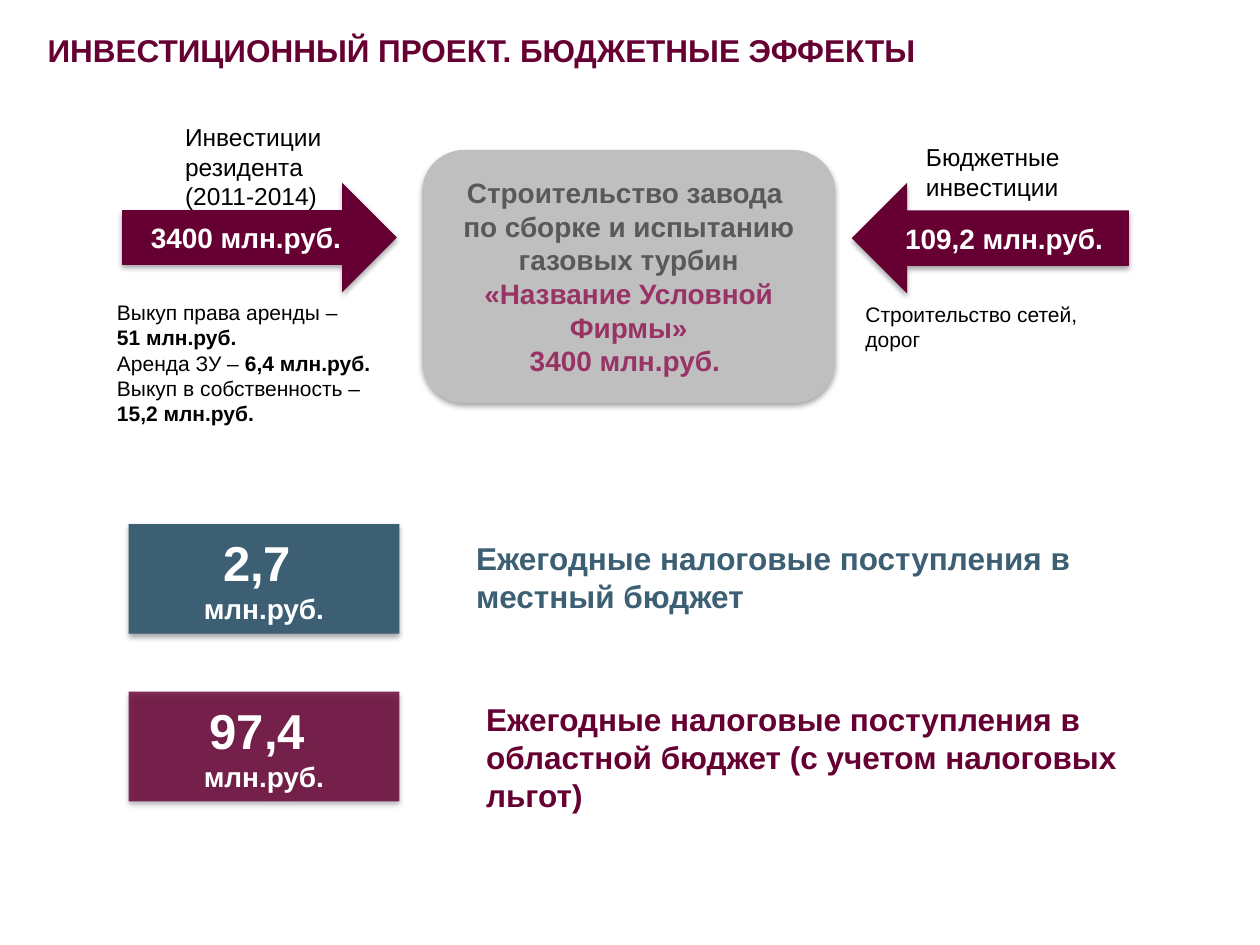
from lxml.etree import SubElement
from pptx import Presentation
from pptx.dml.color import RGBColor
from pptx.enum.shapes import MSO_SHAPE
from pptx.enum.text import MSO_ANCHOR, PP_ALIGN
from pptx.oxml.ns import qn
from pptx.util import Inches, Pt

WINE = RGBColor(0x66, 0x00, 0x33)
PLUM = RGBColor(0x99, 0x33, 0x66)
STEEL = RGBColor(0x3C, 0x5F, 0x74)
SILVER = RGBColor(0xBF, 0xBF, 0xBF)
GRAY = RGBColor(0x59, 0x59, 0x59)
WHITE = RGBColor(0xFF, 0xFF, 0xFF)
BLACK = RGBColor(0x00, 0x00, 0x00)


def add_text(sp, paragraphs, align=PP_ALIGN.LEFT, wrap=True):
    tf = sp.text_frame
    tf.word_wrap = wrap
    for i, runs in enumerate(paragraphs):
        p = tf.paragraphs[0] if i == 0 else tf.add_paragraph()
        p.alignment = align
        for text, size, color, bold in runs:
            for j, line in enumerate(text.split("\n")):
                if j:
                    p.add_line_break()
                if line:
                    r = p.add_run()
                    r.text = line
                    r.font.name = "Arial"
                    r.font.size = Pt(size)
                    r.font.bold = bold
                    r.font.color.rgb = color
    return tf


def add_block(kind, x, y, w, h, color, paragraphs):
    sp = s.shapes.add_shape(kind, Inches(x), Inches(y), Inches(w), Inches(h))
    sp.fill.solid()
    sp.fill.fore_color.rgb = color
    sp.line.fill.background()
    sp.shadow.inherit = False
    effects = sp._element.spPr.find(qn("a:effectLst"))
    shadow = SubElement(effects, qn("a:outerShdw"), blurRad="40000", dist="23000",
                        dir="5400000", rotWithShape="0")
    black = SubElement(shadow, qn("a:srgbClr"), val="000000")
    SubElement(black, qn("a:alpha"), val="35000")
    tf = add_text(sp, paragraphs, PP_ALIGN.CENTER)
    tf.vertical_anchor = MSO_ANCHOR.MIDDLE
    return sp


prs = Presentation()
prs.slide_width = Inches(10)
prs.slide_height = Inches(7.5)
s = prs.slides.add_slide(prs.slide_layouts[6])

title = s.shapes.add_textbox(Inches(0.28), Inches(0.2), Inches(7.16), Inches(0.4))
add_text(title, [[("ИНВЕСТИЦИОННЫЙ ПРОЕКТ. БЮДЖЕТНЫЕ ЭФФЕКТЫ", 18, WINE, True)]], wrap=False)

add_block(MSO_SHAPE.ROUNDED_RECTANGLE, 3.35, 1.19, 3.28, 2.01, SILVER, [
    [("Строительство завода \nпо сборке и испытанию газовых турбин", 16, GRAY, True)],
    [("«Название Условной Фирмы»", 16, PLUM, True)],
    [("3400 млн.руб. ", 16, PLUM, True)],
])

for kind, x, w, h, amount in [
    (MSO_SHAPE.RIGHT_ARROW, 0.97, 2.18, 0.87, "3400 млн.руб."),
    (MSO_SHAPE.LEFT_ARROW, 6.76, 2.2, 0.88, "109,2 млн.руб."),
]:
    add_block(kind, x, 1.45, w, h, WINE, [[(amount, 16, WHITE, True)]])

for x, y, w, h, indent, paragraphs in [
    (-0.01, 0.92, 2.89, 0.81, 1.38, [
        [("Инвестиции", 14, BLACK, False)],
        [("резидента (2011-2014)", 14, BLACK, False)],
    ]),
    (7.25, 1.08, 2.08, 0.57, 0, [[("Бюджетные инвестиции", 14, BLACK, False)]]),
    (6.77, 2.34, 2.25, 0.71, 0, [[("Строительство сетей, дорог", 12, BLACK, False)]]),
    (0.83, 2.33, 2.25, 1.31, 0, [
        [("Выкуп права аренды – \n", 12, BLACK, False), ("51 млн.руб.", 12, BLACK, True)],
        [("Аренда ЗУ – ", 12, BLACK, False), ("6,4 млн.руб.", 12, BLACK, True)],
        [("Выкуп в собственность – ", 12, BLACK, False), ("15,2 млн.руб.", 12, BLACK, True)],
    ]),
    (3.19, 4.23, 6.3, 0.71, 0.49, [
        [("Ежегодные налоговые поступления в местный бюджет", 18, STEEL, True)],
    ]),
    (3.27, 5.51, 6.3, 1.31, 0.49, [
        [("Ежегодные налоговые поступления в областной бюджет (с учетом налоговых льгот)",
          18, WINE, True)],
    ]),
]:
    tb = s.shapes.add_textbox(Inches(x), Inches(y), Inches(w), Inches(h))
    for p in add_text(tb, paragraphs).paragraphs:
        p._p.get_or_add_pPr().set("marL", str(Inches(indent)))

for y, color, alpha, amount in [(4.16, STEEL, 100, "2,7 "), (5.49, WINE, 82, "97,4 ")]:
    sp = add_block(MSO_SHAPE.RECTANGLE, 1.02, y, 2.15, 0.87, color, [
        [(amount, 28, WHITE, True)],
        [("млн.руб.", 16, WHITE, True)],
    ])
    if alpha < 100:
        fill = sp._element.spPr.find(qn("a:solidFill"))
        SubElement(fill[0], qn("a:alpha"), val=str(alpha * 1000))

prs.save("out.pptx")
